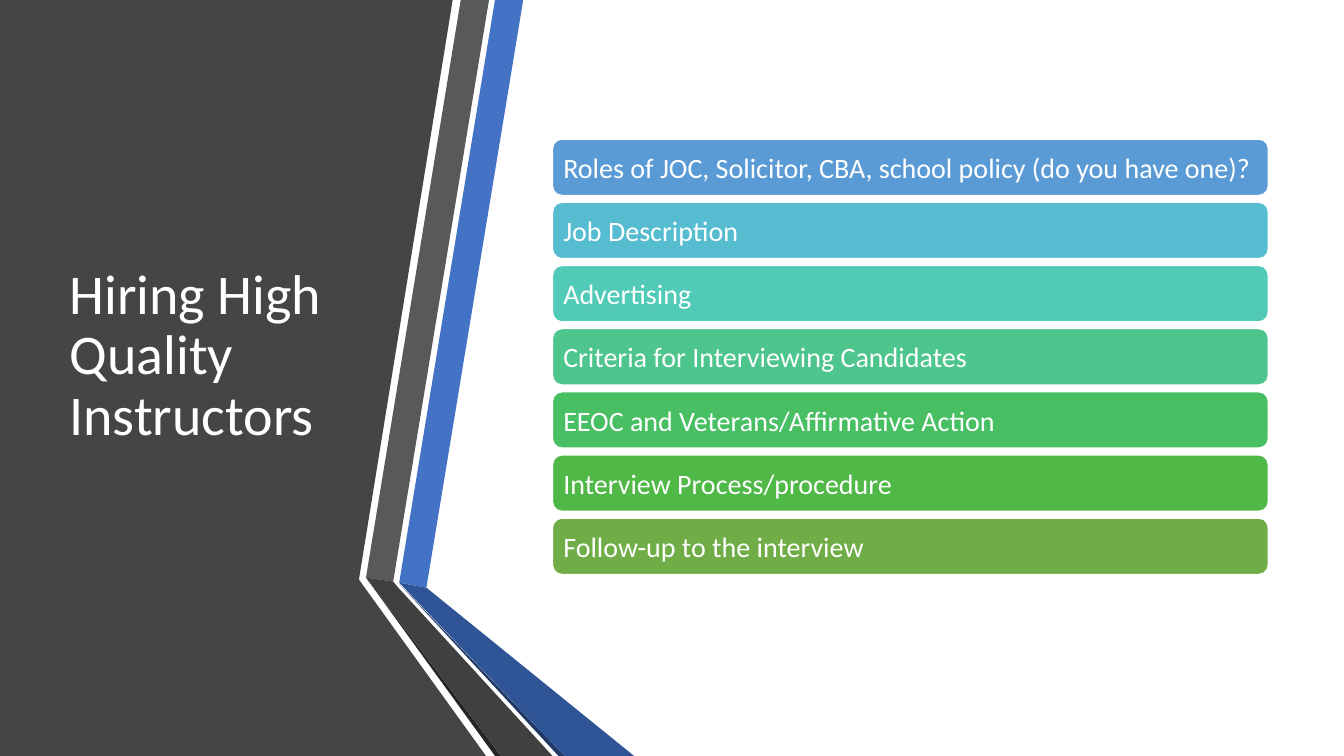
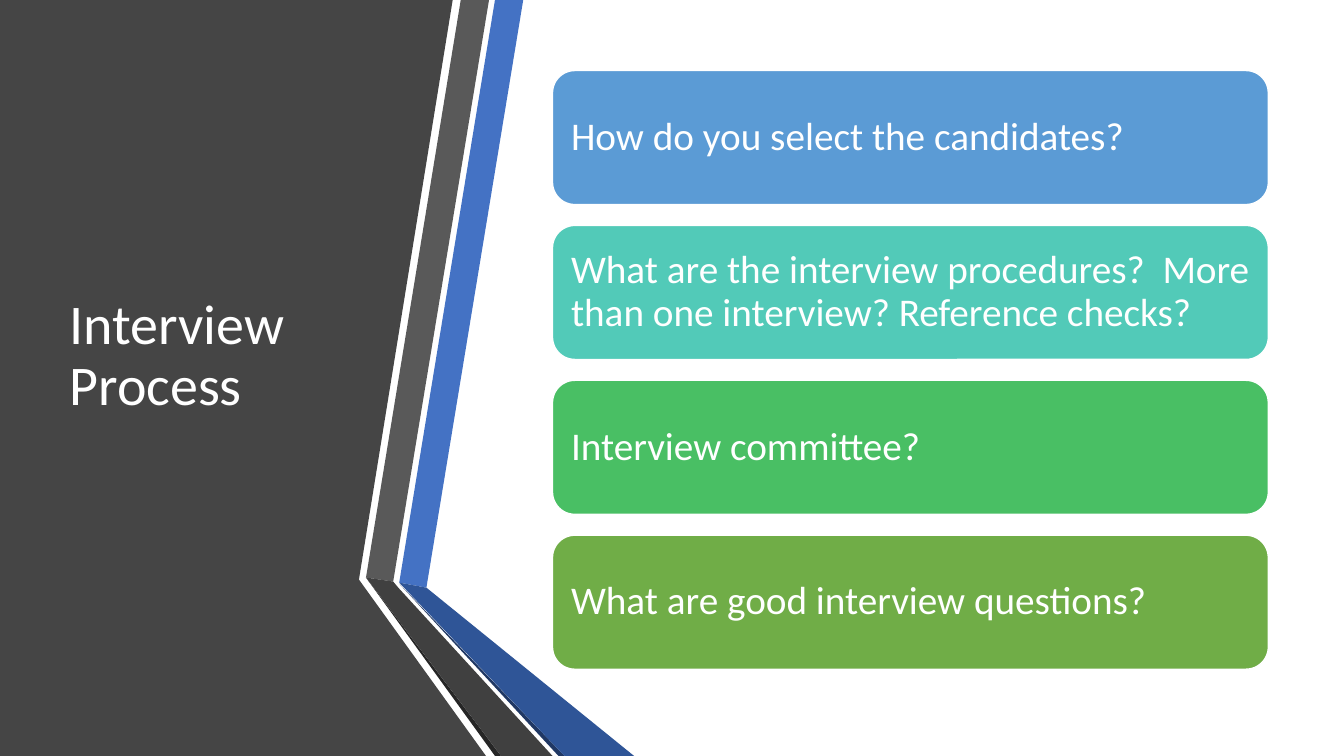
from dataclasses import dataclass

from pptx import Presentation
from pptx.dml.color import RGBColor
from pptx.enum.shapes import MSO_SHAPE, PP_PLACEHOLDER
from pptx.enum.text import MSO_ANCHOR, MSO_AUTO_SIZE, PP_ALIGN
from pptx.util import Inches, Pt

ROUNDED = MSO_SHAPE.ROUNDED_RECTANGLE
TITLE = PP_PLACEHOLDER.TITLE
MIDDLE = MSO_ANCHOR.MIDDLE
LEFT = PP_ALIGN.LEFT
NO_AUTOFIT = MSO_AUTO_SIZE.NONE
TITLE_ONLY = 5


@dataclass(frozen=True)
class Theme:
    """Colours and type sizes shared by all pages."""
    font: str = "Calibri"
    white: str = "FFFFFF"
    panel: str = "454545"
    blue: str = "4472C4"
    blue_dark: str = "2F5597"
    blue_edge: str = "203864"
    grey: str = "595959"
    grey_dark: str = "404040"
    grey_edge: str = "262626"
    sky: str = "5B9BD5"
    cyan: str = "56BCD0"
    teal: str = "52CAB8"
    mint: str = "4DC58D"
    green: str = "49BF64"
    leaf: str = "50B846"
    olive: str = "70AD47"
    title_size: int = 40
    list_size: int = 20
    question_size: int = 28


THEME = Theme()

BANDS = [
    (THEME.panel, [(0, 0), (4.49, 0), (3.56, 5.75), (4.82, 7.5), (0, 7.5)]),
    (THEME.blue, [(3.96, 5.78), (4.23, 5.83), (5.19, 0), (4.91, 0)]),
    (THEME.grey, [(4.85, 0), (4.57, 0), (3.63, 5.73), (3.9, 5.77)]),
    (THEME.grey_edge, [(3.63, 5.73), (4.91, 7.5), (4.97, 7.5)]),
    (THEME.blue_edge, [(3.96, 5.79), (5.54, 7.5), (5.6, 7.5)]),
    (THEME.blue_dark, [(3.96, 5.78), (5.6, 7.5), (6.29, 7.5), (4.23, 5.83)]),
    (THEME.grey_dark, [(5.48, 7.5), (3.95, 5.83), (3.9, 5.77), (3.63, 5.73),
                       (4.97, 7.5)]),
]

TOPICS = {
    "title": "Hiring High Quality Instructors",
    "bars": [
        ("Roles of JOC, Solicitor, CBA, school policy (do you have one)?", THEME.sky),
        ("Job Description", THEME.cyan),
        ("Advertising", THEME.teal),
        ("Criteria for Interviewing Candidates", THEME.mint),
        ("EEOC and Veterans/Affirmative Action", THEME.green),
        ("Interview Process/procedure", THEME.leaf),
        ("Follow-up to the interview", THEME.olive),
    ],
    "first_top": 1.38, "last_top": 5.14, "height": 0.56,
    "inset": 0.08, "size": THEME.list_size, "spacing": 1.0,
}

QUESTIONS = {
    "title": "Interview Process",
    "bars": [
        ("How do you select the candidates?", THEME.sky),
        ("What are the interview procedures?  More than one interview? "
         "Reference checks?", THEME.teal),
        ("Interview committee?", THEME.green),
        ("What are good interview questions?", THEME.olive),
    ],
    "first_top": 0.7, "last_top": 5.31, "height": 1.33,
    "inset": 0.12, "size": THEME.question_size, "spacing": 0.9,
}


def set_all(target, values):
    """Set each named attribute of the target."""
    for name, value in values.items():
        setattr(target, name, value)


def paint(shape, colour):
    """Give a shape a flat fill without a shadow."""
    shape.shadow.inherit = False
    shape.fill.solid()
    shape.fill.fore_color.rgb = RGBColor.from_string(colour)


def write(shape, text, size, spacing, frame_format):
    """Write one white, left-aligned paragraph into a shape."""
    frame = shape.text_frame
    set_all(frame, {"word_wrap": True, "auto_size": NO_AUTOFIT,
                    "vertical_anchor": MIDDLE, **frame_format})
    para = frame.paragraphs[0]
    set_all(para, {"alignment": LEFT, "line_spacing": spacing})
    span = para.add_run()
    span.text = text
    set_all(span.font, {"name": THEME.font, "size": Pt(size)})
    span.font.color.rgb = RGBColor.from_string(THEME.white)


def prepare_layout(layout):
    """Keep only the title placeholder and put it on the dark panel."""
    for box in list(layout.placeholders):
        if box.placeholder_format.type == TITLE:
            set_all(box, {"left": Inches(0.59), "top": Inches(0.75),
                          "width": Inches(3.04), "height": Inches(5.58)})
        else:
            box.element.getparent().remove(box.element)


def add_bands(page):
    """Draw the folded bands and move them to the layout of the page."""
    for colour, corners in BANDS:
        points = [(Inches(x), Inches(y)) for x, y in corners]
        outline = page.shapes.build_freeform(*points[0])
        outline.add_line_segments(points[1:], close=True)
        band = outline.convert_to_shape()
        paint(band, colour)
        band.line.fill.background()
        page.slide_layout.shapes.element.append(band.element)


def add_bars(page, content):
    """Stack the rounded bars at equal steps."""
    bars = content["bars"]
    step = (content["last_top"] - content["first_top"]) / (len(bars) - 1)
    sides = ("margin_left", "margin_right", "margin_top", "margin_bottom")
    margins = dict.fromkeys(sides, Inches(content["inset"]))
    for index, (text, colour) in enumerate(bars):
        top = content["first_top"] + index * step
        bar = page.shapes.add_shape(ROUNDED, Inches(5.48), Inches(top),
                                    Inches(7.1), Inches(content["height"]))
        paint(bar, colour)
        bar.line.color.rgb = RGBColor.from_string(THEME.white)
        bar.line.width = Pt(1)
        write(bar, text, content["size"], content["spacing"], margins)


def add_page(deck, layout, content):
    """Add a page with its title and bars."""
    page = deck.slides.add_slide(layout)
    write(page.shapes.title, content["title"], THEME.title_size, 0.9, {})
    add_bars(page, content)
    return page


def main():
    """Build and save the deck."""
    deck = Presentation()
    set_all(deck, {"slide_width": Inches(13.33), "slide_height": Inches(7.5)})
    layout = deck.slide_layouts[TITLE_ONLY]
    prepare_layout(layout)
    pages = [add_page(deck, layout, content) for content in (TOPICS, QUESTIONS)]
    add_bands(pages[0])
    deck.save("out.pptx")


if __name__ == "__main__":
    main()
